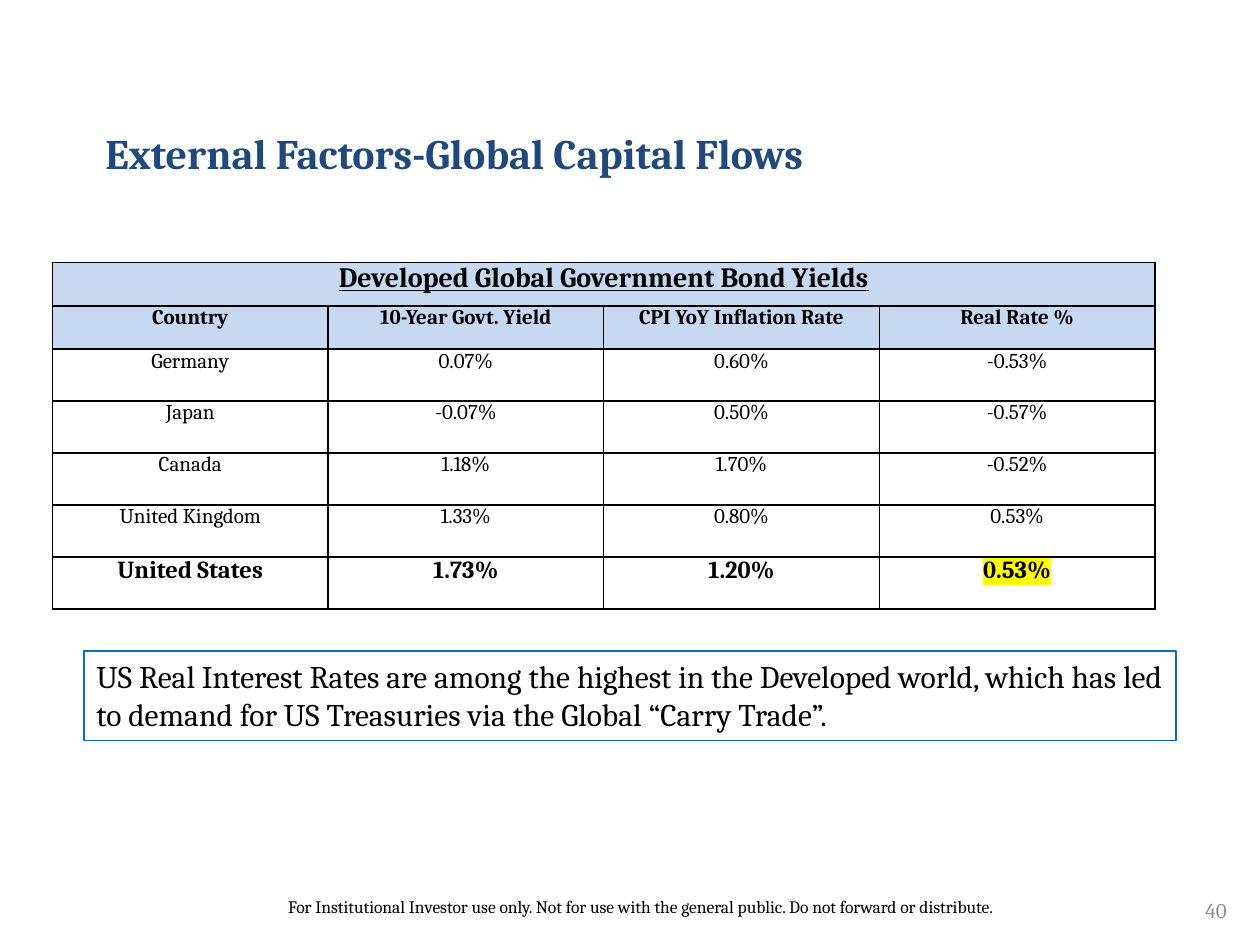
from dataclasses import dataclass
from typing import Optional

from lxml.etree import SubElement
from pptx import Presentation
from pptx.dml.color import RGBColor
from pptx.enum.shapes import MSO_SHAPE
from pptx.enum.text import MSO_ANCHOR, MSO_AUTO_SIZE, PP_ALIGN
from pptx.oxml.ns import qn
from pptx.util import Inches, Pt

FONT = "Cambria"
BLACK, NAVY, GRAY = "000000", "1F497D", "8C8C8C"
BLUE, PALE_BLUE, YELLOW = "0070C0", "C6D9F1", "FFFF00"
GRID_COLS, GRID_ROWS = 120, 90


@dataclass
class Box:
    col: float
    row: float
    cols: float
    rows: float


@dataclass
class Style:
    size: float
    color: str = BLACK
    bold: bool = False
    underline: bool = False
    align: PP_ALIGN = PP_ALIGN.CENTER


@dataclass
class YieldRow:
    cells: list[str]
    style: Style
    share: float
    fill: Optional[str] = None


HEAD, BODY = 1 / 8, 3 / 20
PLAIN = Style(12)
YIELDS = [
    YieldRow(["Developed Global Government Bond Yields"],
             Style(16, bold=True, underline=True), HEAD, PALE_BLUE),
    YieldRow(["Country", "10-Year Govt. Yield", "CPI YoY Inflation Rate", "Real Rate %"],
             Style(12, bold=True), HEAD, PALE_BLUE),
    YieldRow(["Germany", "0.07%", "0.60%", "-0.53%"], PLAIN, BODY),
    YieldRow(["Japan", "-0.07%", "0.50%", "-0.57%"], PLAIN, BODY),
    YieldRow(["Canada", "1.18%", "1.70%", "-0.52%"], PLAIN, BODY),
    YieldRow(["United Kingdom", "1.33%", "0.80%", "0.53%"], PLAIN, BODY),
    YieldRow(["United States", "1.73%", "1.20%", "0.53%"], Style(14, bold=True), BODY),
]

prs = Presentation()
prs.slide_width, prs.slide_height = Inches(10), Inches(7.5)
slide = prs.slides.add_slide(prs.slide_layouts[5])


def rgb(color: str) -> RGBColor:
    return RGBColor.from_string(color)


def place(box: Box) -> tuple[int, int, int, int]:
    w, h = prs.slide_width / GRID_COLS, prs.slide_height / GRID_ROWS
    return int(box.col * w), int(box.row * h), int(box.cols * w), int(box.rows * h)


def write(tf, text: str, style: Style, anchor=MSO_ANCHOR.TOP) -> None:
    tf.word_wrap = True
    tf.vertical_anchor = anchor
    p = tf.paragraphs[0]
    p.alignment = style.align
    p.add_run().text = text
    p.font.name, p.font.size = FONT, Pt(style.size)
    p.font.bold, p.font.underline = style.bold, style.underline
    p.font.color.rgb = rgb(style.color)


def add_text(box: Box, text: str, style: Style, anchor=MSO_ANCHOR.TOP) -> None:
    write(slide.shapes.add_textbox(*place(box)).text_frame, text, style, anchor)


def add_title(box: Box, text: str, style: Style) -> None:
    sp = slide.shapes.title
    sp.left, sp.top, sp.width, sp.height = place(box)
    tf = sp.text_frame
    tf.auto_size = MSO_AUTO_SIZE.NONE
    tf.margin_left = Inches(0.17)
    write(tf, text, style, MSO_ANCHOR.MIDDLE)


def add_callout(box: Box, text: str, style: Style) -> None:
    sp = slide.shapes.add_shape(MSO_SHAPE.RECTANGLE, *place(box))
    sp.shadow.inherit = False
    sp.fill.background()
    sp.line.color.rgb, sp.line.width = rgb(BLUE), Pt(0.75)
    write(sp.text_frame, text, style)


def set_borders(cell, color: str, width: float) -> None:
    tc_pr = cell._tc.get_or_add_tcPr()
    for side in ("a:lnL", "a:lnR", "a:lnT", "a:lnB"):
        ln = SubElement(tc_pr, qn(side), w=str(Pt(width)))
        fill = SubElement(ln, qn("a:solidFill"))
        SubElement(fill, qn("a:srgbClr"), val=color)


def highlight(cell, color: str) -> None:
    r_pr = cell.text_frame.paragraphs[0].runs[0]._r.get_or_add_rPr()
    SubElement(SubElement(r_pr, qn("a:highlight")), qn("a:srgbClr"), val=color)


def add_yield_table(box: Box, rows: list[YieldRow], n_cols: int) -> None:
    left, top, width, height = place(box)
    table = slide.shapes.add_table(len(rows), n_cols, left, top, width, height).table
    table.first_row = table.horz_banding = False
    for column in table.columns:
        column.width = width // n_cols
    for i, row in enumerate(rows):
        table.rows[i].height = int(height * row.share)
        for cell in table.rows[i].cells:
            cell.margin_left = cell.margin_right = Inches(0.07)
            cell.margin_top = cell.margin_bottom = 0
            set_borders(cell, BLACK, 1)
            if row.fill:
                cell.fill.solid()
                cell.fill.fore_color.rgb = rgb(row.fill)
            else:
                cell.fill.background()
        for j, text in enumerate(row.cells):
            write(table.cell(i, j).text_frame, text, row.style)
    table.cell(0, 0).merge(table.cell(0, n_cols - 1))
    highlight(table.cell(len(rows) - 1, n_cols - 1), YELLOW)


add_text(Box(22, 84.7, 78, 3.2),
         "For Institutional Investor use only. Not for use with the general public. "
         "Do not forward or distribute.", Style(10))
add_title(Box(8, 7, 108, 15), "External Factors-Global Capital Flows",
          Style(24, NAVY, bold=True, align=PP_ALIGN.LEFT))
add_text(Box(90, 84.25, 28, 4.8), "40", Style(12, GRAY, align=PP_ALIGN.RIGHT),
         MSO_ANCHOR.MIDDLE)
add_yield_table(Box(5, 25, 105, 33), YIELDS, 4)
add_callout(Box(8, 62, 104, 8.5),
            "US Real Interest Rates are among the highest in the Developed world, "
            "which has led to demand for US Treasuries via the Global “Carry Trade”.",
            Style(18, align=PP_ALIGN.LEFT))

prs.save("out.pptx")
